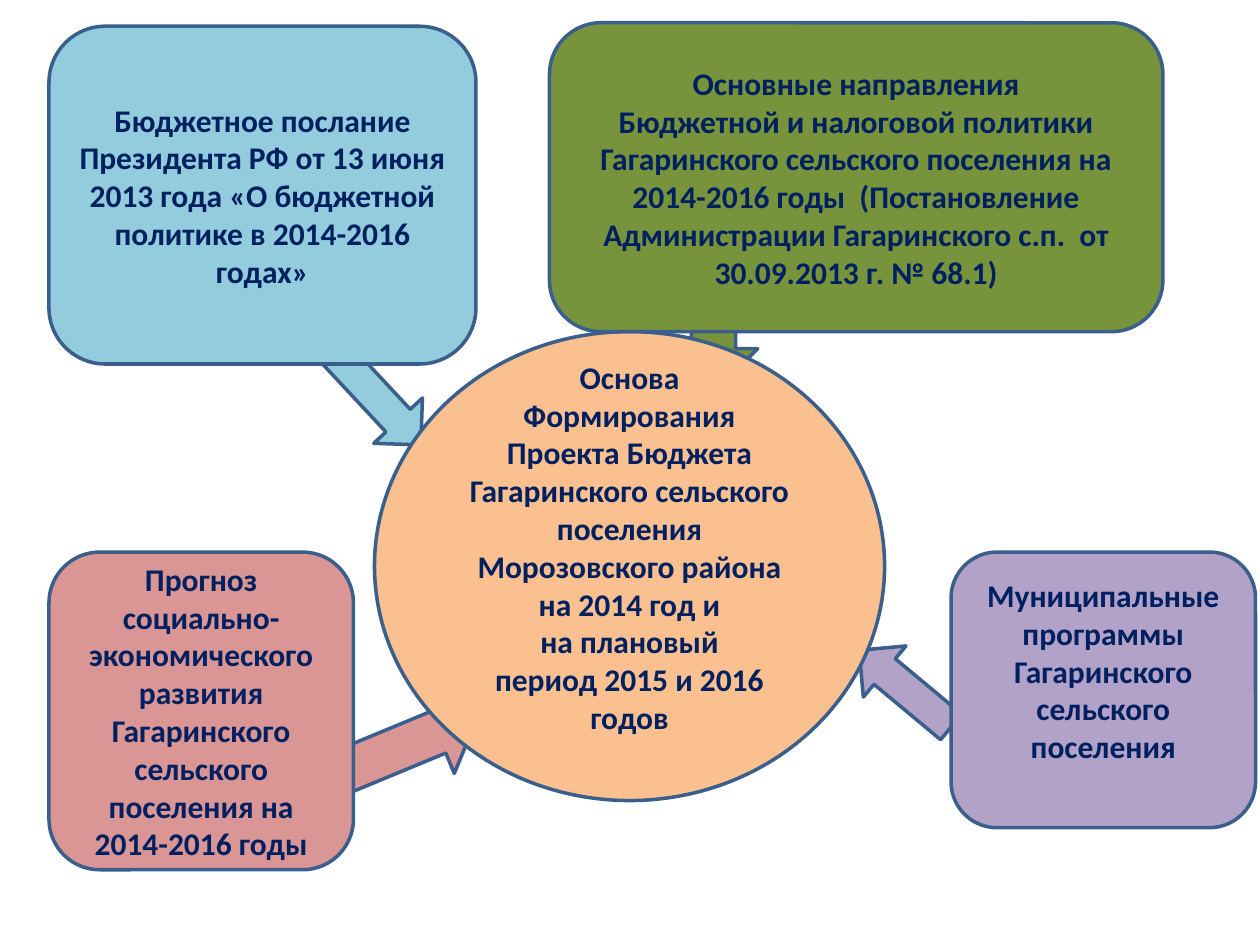
from pptx import Presentation
from pptx.dml.color import RGBColor
from pptx.enum import shapes, text
from pptx.util import Pt

COLORS = {
    "outline": "3A5F8C",
    "text": "002060",
    "blue": "93CDDD",
    "green": "77933C",
    "red": "D99694",
    "purple": "B3A2C7",
    "orange": "FAC090",
}
KIND = shapes.MSO_SHAPE
LEFT_EDGE, LOWER_TOP, LOWER_WIDTH = 28, 315.5, 174
LINE_HEIGHT = 22

ARROWS = [  # kind, colour, left, top, width, height, rotation
    (KIND.RIGHT_ARROW, "red", 179, 402.5, 98, 50.5, 337.5),
    (KIND.DOWN_ARROW, "blue", 193, 182, 38, 83.5, 317),
    (KIND.DOWN_ARROW, "green", 382.5, 174, 50.5, 50.5, 0),
    (KIND.LEFT_ARROW, "purple", 483, 374.5, 68.5, 38, 39.8),
]
CENTRE_TEXT = [
    "Основа",
    "Формирования",
    "Проекта Бюджета Гагаринского сельского поселения Морозовского района",
    "на 2014 год и",
    "на плановый",
    "период 2015 и 2016 годов",
]
PROGRAMMES_TEXT = ["Муниципальные программы", "Гагаринского сельского поселения"]
POLICY_TEXT = [
    "Основные направления",
    "Бюджетной и налоговой политики Гагаринского сельского поселения на "
    "2014-2016 годы  (Постановление Администрации Гагаринского с.п.  от "
    "30.09.2013 г. № 68.1)",
]
ADDRESS_TEXT = [
    "Бюджетное послание Президента РФ от 13 июня 2013 года "
    "«О бюджетной политике в 2014-2016 годах»"
]
FORECAST_TEXT = [
    "Прогноз социально-экономического развития Гагаринского сельского "
    "поселения на 2014-2016 годы"
]


def rgb(name):
    return RGBColor.from_string(COLORS[name])


def add_outlined_shape(slide, kind, color, left, top, width, height, rotation=0):
    shape = slide.shapes.add_shape(kind, Pt(left), Pt(top), Pt(width), Pt(height))
    shape.rotation = rotation
    shape.shadow.inherit = False
    shape.fill.solid()
    shape.fill.fore_color.rgb = rgb(color)
    shape.line.color.rgb = rgb("outline")
    shape.line.width = Pt(2)
    return shape


def write_text(shape, paragraphs, raise_by=0):
    """Write centred bold text; raise_by is extra space kept below it."""
    frame = shape.text_frame
    frame.word_wrap = True
    frame.vertical_anchor = text.MSO_ANCHOR.MIDDLE
    frame.margin_bottom = Pt(3.6 + raise_by)
    for index, content in enumerate(paragraphs):
        paragraph = frame.add_paragraph() if index else frame.paragraphs[0]
        paragraph.alignment = text.PP_ALIGN.CENTER
        run = paragraph.add_run()
        run.text = content
        run.font.name = "Calibri"
        run.font.size = Pt(18)
        run.font.bold = True
        run.font.color.rgb = rgb("text")


def add_box(slide, color, left, top, width, height, paragraphs, raise_by=0):
    box = add_outlined_shape(slide, KIND.ROUNDED_RECTANGLE, color, left, top, width, height)
    write_text(box, paragraphs, raise_by)


def main():
    presentation = Presentation()
    presentation.slide_width, presentation.slide_height = Pt(720), Pt(540)
    slide = presentation.slides.add_slide(presentation.slide_layouts[6])

    for arrow in ARROWS:
        add_outlined_shape(slide, *arrow)

    centre = add_outlined_shape(slide, KIND.OVAL, "orange", 214, 189.5, 291.5, 268)
    write_text(centre, CENTRE_TEXT, LINE_HEIGHT)

    add_box(slide, "purple", 543.5, LOWER_TOP, LOWER_WIDTH, 157.5, PROGRAMMES_TEXT, LINE_HEIGHT)
    add_box(slide, "green", 314, 13, 350.5, 176.5, POLICY_TEXT)
    add_box(slide, "blue", LEFT_EDGE, 15, 244, 193, ADDRESS_TEXT)
    add_box(slide, "red", LEFT_EDGE, LOWER_TOP, LOWER_WIDTH, 181.5, FORECAST_TEXT)

    presentation.save("out.pptx")


if __name__ == "__main__":
    main()
